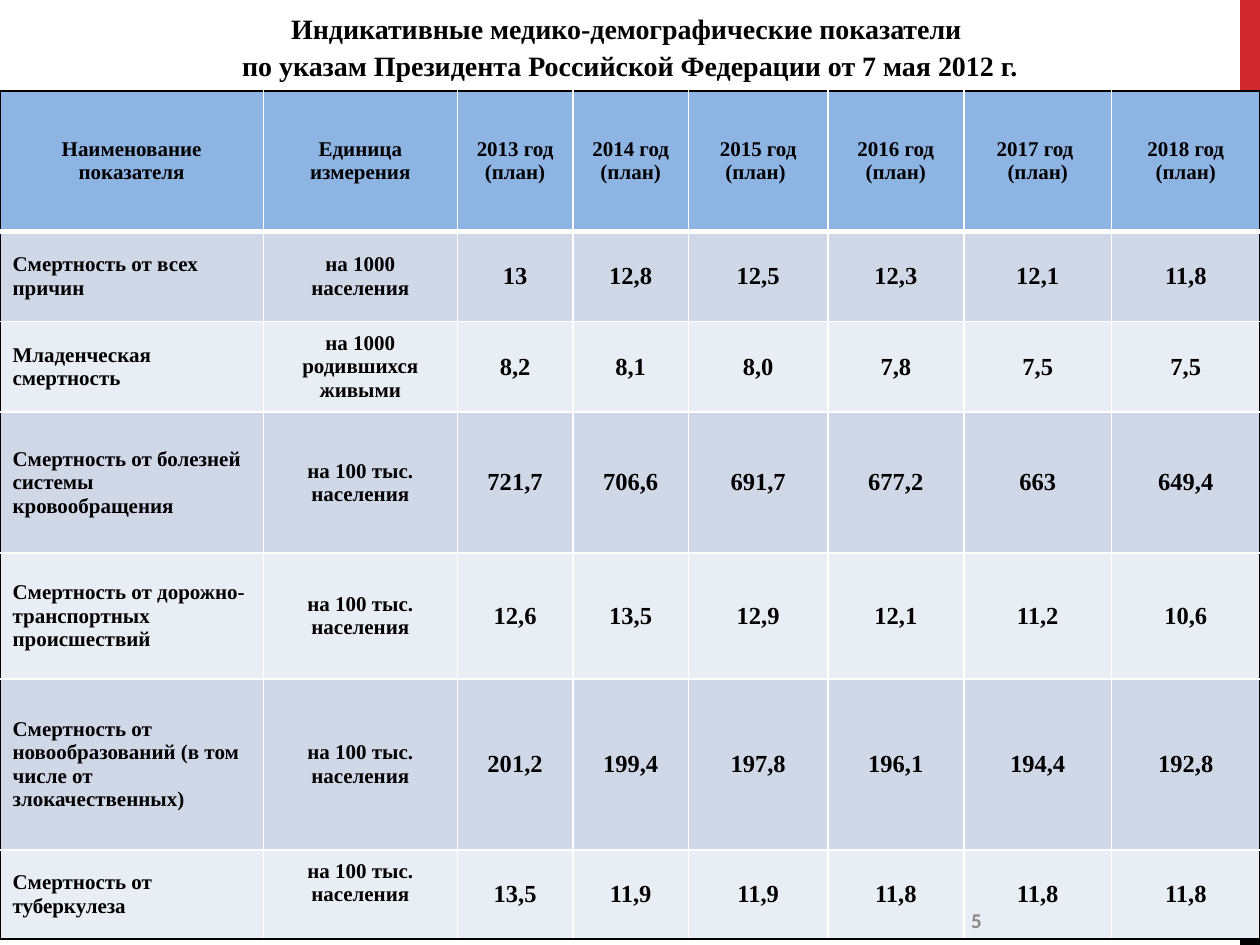
from dataclasses import dataclass

import pptx
import pptx.dml.color
import pptx.enum.shapes
import pptx.enum.text
import pptx.oxml
import pptx.oxml.ns
import pptx.util
from pptx.util import Cm

ALIGN = pptx.enum.text.PP_ALIGN
MIDDLE = pptx.enum.text.MSO_ANCHOR.MIDDLE


@dataclass(frozen=True)
class Theme:
    serif: str = "Times New Roman"
    sans: str = "Calibri"
    black: str = "000000"
    white: str = "FFFFFF"
    red: str = "D1282E"
    grey: str = "898989"
    header: str = "8EB4E3"
    bands: tuple = ("D0D8E8", "E9EDF4")
    title_size: int = 16
    label_size: int = 12
    value_size: int = 14


THEME = Theme()
SLIDE_WIDTH, SLIDE_HEIGHT = 25.4, 19.05
TITLE_HEIGHT = 1.83
RED_HEIGHT = 3.81
STRIPE_WIDTH = 0.4

COLUMN_WIDTHS = [5.31, 3.91, 2.33, 2.33, 2.81, 2.74, 2.98, 2.99]
ROW_HEIGHTS = [2.84, 1.81, 1.83, 2.84, 2.54, 3.44, 1.8]

TITLE = ("Индикативные медико-демографические показатели \n"
         "по указам Президента Российской Федерации от 7 мая 2012 г.")
HEADER = ["Наименование показателя", "Единица измерения", "2013 год (план)",
          "2014 год (план)", "2015 год (план) ", "2016 год\n(план)",
          "2017 год \n(план)", "2018 год (план)"]
PER_100K = "на 100 тыс. населения"
INDICATORS = [
    ["Смертность от всех причин", "на 1000 населения",
     "13", "12,8", "12,5", "12,3", "12,1", "11,8"],
    ["Младенческая смертность", "на 1000 родившихся живыми",
     "8,2", "8,1", "8,0", "7,8", "7,5", "7,5"],
    ["Смертность от болезней системы кровообращения", PER_100K,
     "721,7", "706,6", "691,7", "677,2", "663", "649,4"],
    ["Смертность от дорожно-транспортных происшествий", PER_100K,
     "12,6", "13,5", "12,9", "12,1", "11,2", "10,6"],
    ["Смертность от новообразований (в том числе от злокачественных)", PER_100K,
     "201,2", "199,4", "197,8", "196,1", "194,4", "192,8"],
    ["Смертность от туберкулеза", PER_100K,
     "13,5", "11,9", "11,9", "11,8", "11,8", "11,8"],
]


def rgb(color):
    return pptx.dml.color.RGBColor.from_string(color)


def write(frame, text, size=THEME.label_size, font=THEME.serif,
          color=THEME.black, align=ALIGN.CENTER, spacing=None):
    """Fill a text frame with bold text, one paragraph per line."""
    frame.word_wrap = True
    for index, line in enumerate(text.split("\n")):
        paragraph = frame.add_paragraph() if index else frame.paragraphs[0]
        paragraph.alignment = align
        if spacing:
            paragraph.line_spacing = spacing
        run = paragraph.add_run()
        run.text = line
        run.font.name = font
        run.font.size = pptx.util.Pt(size)
        run.font.bold = True
        run.font.color.rgb = rgb(color)


def add_stripe(slide, top, height, color):
    stripe = slide.shapes.add_shape(
        pptx.enum.shapes.MSO_SHAPE.RECTANGLE, Cm(SLIDE_WIDTH - STRIPE_WIDTH),
        Cm(top), Cm(STRIPE_WIDTH), Cm(height))
    stripe.shadow.inherit = False
    stripe.fill.solid()
    stripe.fill.fore_color.rgb = rgb(color)
    stripe.line.fill.background()


def set_title(slide):
    title = slide.shapes.title
    title.left, title.top = Cm(0), Cm(0)
    title.width, title.height = Cm(SLIDE_WIDTH), Cm(TITLE_HEIGHT)
    title.text_frame.auto_size = pptx.enum.text.MSO_AUTO_SIZE.NONE
    title.text_frame.vertical_anchor = MIDDLE
    write(title.text_frame, TITLE, size=THEME.title_size, spacing=1.1)


def set_borders(cell, borders):
    """Draw borders given as (side, colour, points), in L, R, T, B order."""
    properties = cell._tc.get_or_add_tcPr()
    for index, (side, color, points) in enumerate(borders):
        properties.insert(index, pptx.oxml.parse_xml(
            f'<a:ln{side} {pptx.oxml.ns.nsdecls("a")} w="{pptx.util.Pt(points)}">'
            f'<a:solidFill><a:srgbClr val="{color}"/></a:solidFill></a:ln{side}>'))


def format_cell(cell, row, column):
    cell.vertical_anchor = MIDDLE
    cell.fill.solid()
    cell.fill.fore_color.rgb = rgb(
        THEME.bands[(row - 1) % 2] if row else THEME.header)

    # Black outer frame, white grid, thick rule under the header
    last_row, last_column = len(ROW_HEIGHTS) - 1, len(COLUMN_WIDTHS) - 1
    outer = {"L": column == 0, "R": column == last_column,
             "T": row == 0, "B": row == last_row}
    thick = {"T": row == 1, "B": row == 0}
    set_borders(cell, [
        (side, THEME.black if edge else THEME.white, 3 if thick.get(side) else 1)
        for side, edge in outer.items()])


def add_indicator_table(slide):
    table = slide.shapes.add_table(
        len(ROW_HEIGHTS), len(COLUMN_WIDTHS), Cm(0), Cm(TITLE_HEIGHT),
        Cm(SLIDE_WIDTH), Cm(sum(ROW_HEIGHTS))).table
    for column, width in zip(table.columns, COLUMN_WIDTHS):
        column.width = Cm(width)
    for row, height in zip(table.rows, ROW_HEIGHTS):
        row.height = Cm(height)

    for row, texts in enumerate([HEADER] + INDICATORS):
        for column, text in enumerate(texts):
            cell = table.cell(row, column)
            format_cell(cell, row, column)
            is_name = row > 0 and column == 0
            is_value = row > 0 and column > 1
            write(cell.text_frame, text,
                  size=THEME.value_size if is_value else THEME.label_size,
                  align=ALIGN.LEFT if is_name else ALIGN.CENTER)

    # The last unit sits a little above the middle
    table.cell(len(INDICATORS), 1).margin_bottom = Cm(0.6)


def add_page_number(slide, number):
    box = slide.shapes.add_textbox(Cm(19.33), Cm(18.03), Cm(5.92), Cm(1.02))
    box.text_frame.vertical_anchor = MIDDLE
    write(box.text_frame, number, font=THEME.sans, color=THEME.grey,
          align=ALIGN.LEFT)


def main():
    deck = pptx.Presentation()
    deck.slide_width, deck.slide_height = Cm(SLIDE_WIDTH), Cm(SLIDE_HEIGHT)
    slide = deck.slides.add_slide(deck.slide_layouts.get_by_name("Title Only"))

    # Side stripe in two colours
    add_stripe(slide, 0, RED_HEIGHT, THEME.red)
    add_stripe(slide, RED_HEIGHT, SLIDE_HEIGHT - RED_HEIGHT, THEME.black)

    # Heading, indicators and page number
    set_title(slide)
    add_indicator_table(slide)
    add_page_number(slide, "5")

    deck.save("out.pptx")


if __name__ == "__main__":
    main()
